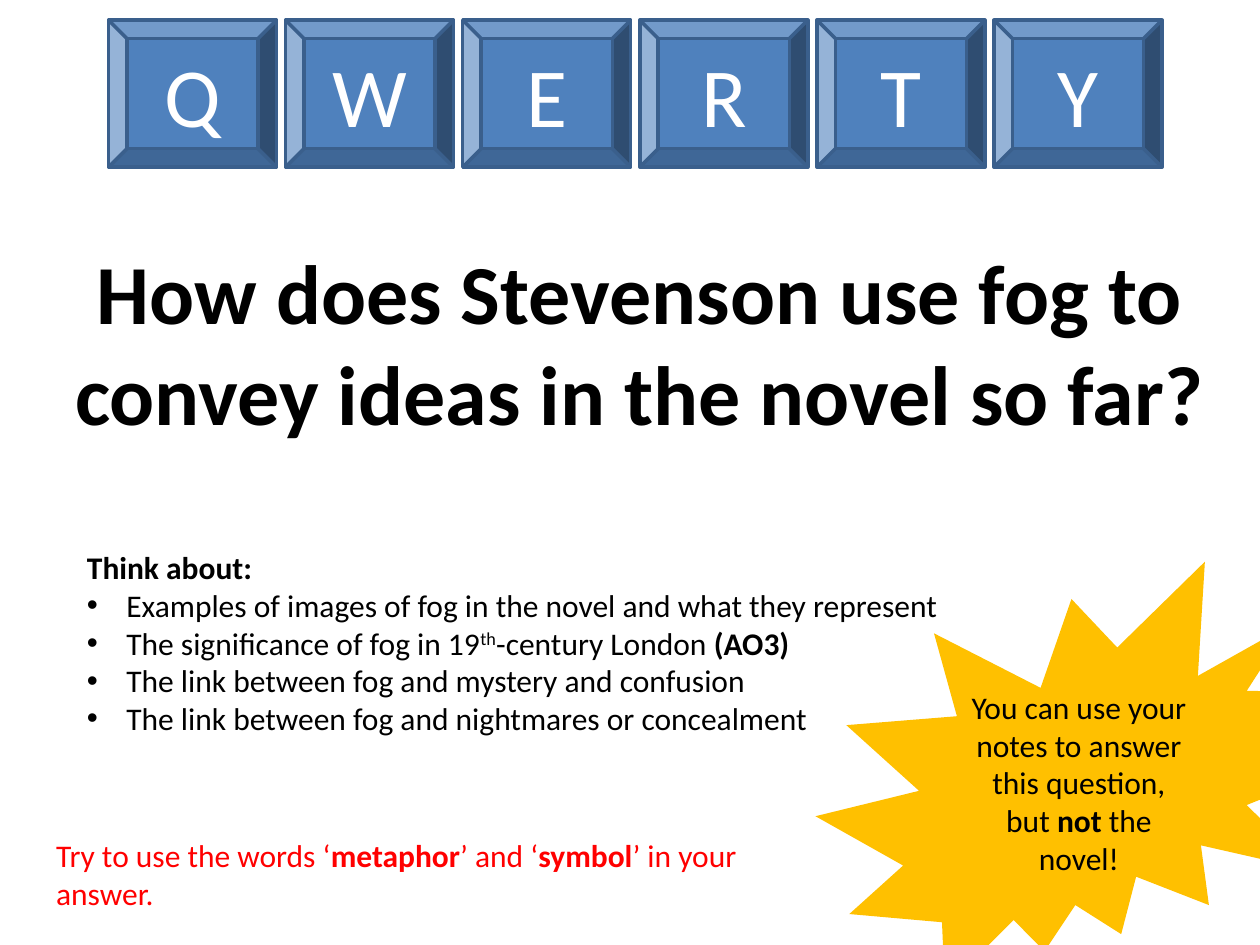
"""Build the lesson slide asking how Stevenson uses fog."""
from pptx import Presentation
from pptx.dml.color import RGBColor
from pptx.enum.shapes import MSO_SHAPE as Preset
from pptx.enum.text import MSO_ANCHOR as Anchor, MSO_AUTO_SIZE as AutoSize, PP_ALIGN as Align
from pptx.oxml.xmlchemy import OxmlElement
from pptx.util import Pt

BLACK = RGBColor(0, 0, 0)
WHITE = RGBColor(255, 255, 255)
RED = RGBColor(255, 0, 0)
GOLD = RGBColor(0xFF, 0xC0, 0x00)
KEY_BLUE = RGBColor(0x4F, 0x81, 0xBD)
KEY_EDGE = RGBColor(0x3A, 0x5F, 0x8C)


def write_runs(paragraph, pieces, size=18, color=BLACK, align=Align.LEFT):
    paragraph.alignment = align
    for words, style in pieces:
        run = paragraph.add_run()
        run.text = words
        run.font.name = "Calibri"
        run.font.size = Pt(size)
        run.font.bold = style == "bold"
        run.font.color.rgb = color
        if style == "super":
            run.font._element.set("baseline", "30000")


def place(part, left, top, width, height):
    part.left, part.top, part.width, part.height = Pt(left), Pt(top), Pt(width), Pt(height)
    part.text_frame.word_wrap = True
    part.text_frame.auto_size = AutoSize.NONE
    part.text_frame.vertical_anchor = Anchor.TOP


deck = Presentation()
deck.slide_width, deck.slide_height = Pt(720), Pt(540)
slide = deck.slides.add_slide(deck.slide_layouts[1])
shapes = slide.shapes

question = shapes.title
place(question, 31, 134, 669, 124)
write_runs(question.text_frame.paragraphs[0],
           [("How does Stevenson use fog to convey ideas in the novel so far?", "bold")],
           size=48, align=Align.CENTER)

prompts = slide.placeholders[1]
place(prompts, 42.5, 309.5, 635, 117)
prompt_lines = [
    [("Think about:", "bold")],
    [("Examples of images of fog in the novel and what they represent", "")],
    [("The significance of fog in 19", ""), ("th", "super"),
     ("-century London ", ""), ("(AO3)", "bold")],
    [("The link between fog and mystery and confusion", "")],
    [("The link between fog and nightmares or concealment", "")],
]
for number, pieces in enumerate(prompt_lines):
    frame = prompts.text_frame
    line = frame.add_paragraph() if number else frame.paragraphs[0]
    write_runs(line, pieces)
    line.space_before = Pt(0)
    indent = Pt(22.5) if number else 0
    properties = line._p.get_or_add_pPr()
    properties.set("marL", str(indent))
    properties.set("indent", str(-indent))
    if number == 0:
        properties.append(OxmlElement("a:buNone"))

reminder = shapes.add_shape(Preset.EXPLOSION2, Pt(466), Pt(321), Pt(325), Pt(244))
reminder.shadow.inherit = False
reminder.fill.solid()
reminder.fill.fore_color.rgb = GOLD
reminder.line.fill.background()
reminder.text_frame.word_wrap = True
reminder.text_frame.vertical_anchor = Anchor.MIDDLE
write_runs(reminder.text_frame.paragraphs[0],
           [("You can use your notes to answer this question, but ", ""),
            ("not", "bold"), (" the novel!", "")], align=Align.CENTER)

for column, letter in enumerate("QWERTY"):
    key = shapes.add_shape(Preset.BEVEL, Pt(62 + 101.2 * column), Pt(11.5), Pt(96), Pt(84))
    key.shadow.inherit = False
    key.fill.solid()
    key.fill.fore_color.rgb = KEY_BLUE
    key.line.color.rgb = KEY_EDGE
    key.line.width = Pt(2)
    key.text_frame.vertical_anchor = Anchor.MIDDLE
    write_runs(key.text_frame.paragraphs[0], [(letter, "")],
               size=48, color=WHITE, align=Align.CENTER)

tip = shapes.add_textbox(0, 0, 0, 0)
place(tip, 25, 474, 425.5, 51)
write_runs(tip.text_frame.paragraphs[0],
           [("Try to use the words ‘", ""), ("metaphor", "bold"), ("’ and ‘", ""),
            ("symbol", "bold"), ("’ in your answer.", "")], color=RED)

deck.save("out.pptx")
